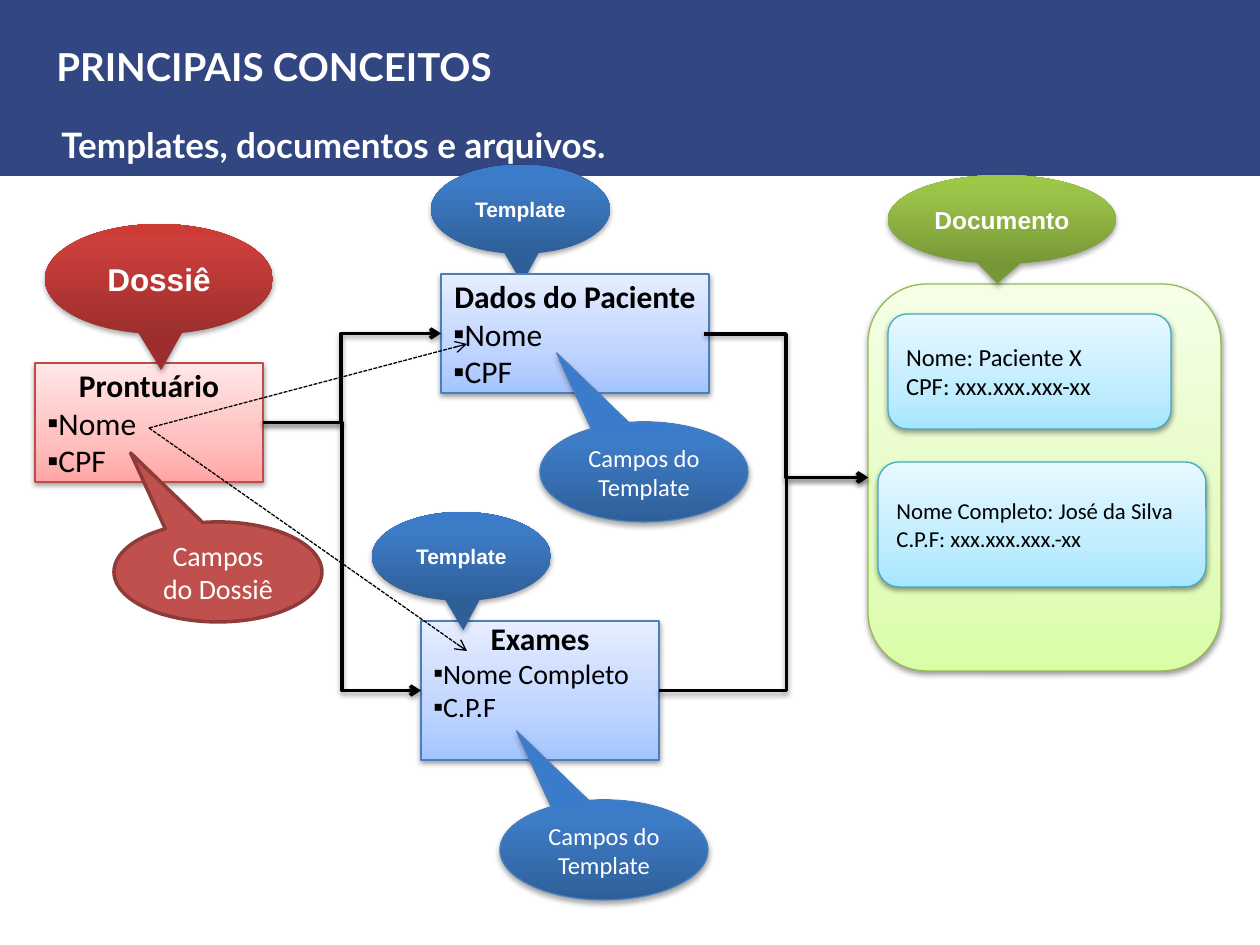
from lxml import etree
from pptx import Presentation
from pptx import util as u
from pptx.dml.color import RGBColor
from pptx.enum import dml, shapes, text
from pptx.oxml.ns import qn

PX = 914400 / 126
PINK = (("FFA6A5", "FFC0BF", "FFE7E7"), 35, "BF4C48")
LILAC = (("A4C4FF", "BFD4FF", "E6EEFF"), 35, "4B7EBC")
LIME = (("DAFDA7", "E4FCC2", "F5FFE7"), 35, "98B955")
AQUA = (("A7E6FF", "C1EDFF", "E7F8FF"), 35, "46AAC5")
RED = (("9C2F2D", "CB3E3A", "CE3B37"), 80, None)
BLUE = (("2F5F99", "3D7CC7", "3A7CCB"), 80, None)
BLUE_EDGED = (*BLUE[:2], "4B7EBC")
GREEN = (("779737", "9BC348", "9DC746"), 80, None)
DOWN = (0.01, 0.83)
UP_LEFT = (-0.42, -1.19)


def px(*values):
    """Turn pixels into a list of EMU lengths."""
    return [u.Emu(round(value * PX)) for value in values]


def color(value):
    """Turn a hex string into a colour."""
    return RGBColor.from_string(value)


def add(parent, tag, **attributes):
    """Append an XML element and return it."""
    return etree.SubElement(parent, qn(tag), attributes)


def drop_shadow(effects, distance):
    """Fill an effect list with a soft shadow pointing down."""
    shadow = add(effects, "a:outerShdw", blurRad="40000", dist=str(distance),
                 dir="5400000", rotWithShape="0")
    tint = add(shadow, "a:srgbClr", val="000000")
    add(tint, "a:alpha", val="38000" if distance == 20000 else "35000")


def outline(shape, value, width=0.75):
    """Set or remove the outline of a shape."""
    if value is None:
        shape.line.fill.background()
    else:
        shape.line.color.rgb = color(value)
        shape.line.width = u.Pt(width)


def solid_shape(page, kind, box, fill, line=None, width=0.75):
    """Add a flat shape without shadow."""
    shape = page.shapes.add_shape(kind, *px(*box))
    shape.fill.solid()
    shape.fill.fore_color.rgb = color(fill)
    outline(shape, line, width)
    shape.shadow.inherit = False
    return shape


def shaded_shape(page, kind, box, style, distance=20000):
    """Add a shape with a three-stop gradient and a soft shadow."""
    colors, middle, line = style
    shape = page.shapes.add_shape(kind, *px(*box))
    shape.fill.gradient()
    shape.fill.gradient_angle = 90
    stops = shape.element.spPr.find(".//" + qn("a:gsLst"))
    for stop in list(stops):
        stops.remove(stop)
    for place, value in zip((0, middle, 100), colors):
        stop = add(stops, "a:gs", pos=str(place * 1000))
        add(stop, "a:srgbClr", val=value)
    outline(shape, line)
    shape.shadow.inherit = False
    drop_shadow(shape.element.spPr.find(qn("a:effectLst")), distance)
    return shape


def write(shape, lines, size, font="Calibri", fill="000000", bold=False,
          align=text.PP_ALIGN.LEFT, anchor=text.MSO_ANCHOR.MIDDLE):
    """Write one paragraph per line and return the paragraphs."""
    frame = shape.text_frame
    frame.word_wrap = True
    frame.vertical_anchor = anchor
    frame.text = "\n".join(lines)
    for para in frame.paragraphs:
        para.alignment = align
        para.font.size = u.Pt(size)
        para.font.name = font
        para.font.bold = bold
        para.font.color.rgb = color(fill)
    return frame.paragraphs


def callout(page, box, style, words, size, tip, font="Calibri", bold=False):
    """Add an elliptical callout whose tail ends at the given tip."""
    kind = shapes.MSO_SHAPE.OVAL_CALLOUT
    if style is None:
        shape = solid_shape(page, kind, box, "C0504D", "8E3B39", 2)
    else:
        shape = shaded_shape(page, kind, box, style, 23000)
    shape.adjustments[0], shape.adjustments[1] = tip
    write(shape, [words], size, font, "FFFFFF", bold, text.PP_ALIGN.CENTER)


def card(page, box, style, title, fields, size=18):
    """Add a rectangle with a bold title and bulleted fields."""
    shape = shaded_shape(page, shapes.MSO_SHAPE.RECTANGLE, box, style)
    heading, *items = [title, *fields]
    frame = shape.text_frame
    frame.text = "\n".join([heading, *items])
    for para in frame.paragraphs[1:]:
        properties = para._p.get_or_add_pPr()
        add(properties, "a:buFont", typeface="Arial")
        add(properties, "a:buChar", char="▪")
    frame.word_wrap = True
    frame.vertical_anchor = text.MSO_ANCHOR.MIDDLE
    for index, para in enumerate(frame.paragraphs):
        para.alignment = text.PP_ALIGN.LEFT if index else text.PP_ALIGN.CENTER
        para.font.size = u.Pt(size if index else 18)
        para.font.name = "Calibri"
        para.font.bold = index == 0
        para.font.color.rgb = color("000000")
    return shape


def header(page, box):
    """Draw the title band with its heading and subheading."""
    left, top, width, height = box
    solid_shape(page, shapes.MSO_SHAPE.RECTANGLE, box, "324682")
    for words, size, place in (
            ("PRINCIPAIS CONCEITOS", 22, (44, 37, 1033, 59)),
            ("Templates, documentos e arquivos.", 20, (49, 98, 837, 67))):
        x, y, w, h = place
        label = page.shapes.add_textbox(*px(left + x, top + y, w, h))
        paras = write(label, [words], size, "Lato", "FFFFFF", True,
                      anchor=text.MSO_ANCHOR.TOP)
    paras[0].line_spacing = u.Pt(35)


def dossier(page, box):
    """Draw the dossier card with its two callouts."""
    left, top, width, height = box
    shape = card(page, box, PINK, "Prontuário", ["Nome", "CPF"])
    callout(page, (left + 10, top - 139, 228, 110), RED, "Dossiê", 18, DOWN, "Arial", True)
    callout(page, (left + 79, top + height + 40, 208, 100), None,
            "Campos do Dossiê", 16, UP_LEFT)
    return shape


def template(page, box, title, fields, size, shift, drop, label_behind):
    """Draw a template card with its name and fields callouts."""
    left, top, width, height = box

    def label():
        """Draw the callout that names the card."""
        callout(page, (left + shift, top - 109, 179, 89), BLUE,
                "Template", 12, DOWN, "Arial", True)

    if label_behind:
        label()
    shape = card(page, box, LILAC, title, fields, size)
    if not label_behind:
        label()
    callout(page, (left + drop[0], top + height + drop[1], 208, 100), BLUE_EDGED,
            "Campos do Template", 14, UP_LEFT)
    return shape


def document(page, box):
    """Draw the document panel with its callout and filled-in records."""
    left, top, width, height = box
    rounded = shapes.MSO_SHAPE.ROUNDED_RECTANGLE
    panel = shaded_shape(page, rounded, box, LIME)
    records = (
        ((20, 30, 283, 115), ["Nome: Paciente X", "CPF: xxx.xxx.xxx-xx"], 14),
        ((10, 178, 328, 125), ["Nome Completo: José da Silva", "C.P.F: xxx.xxx.xxx.-xx"], 13))
    for (x, y, w, h), lines, size in records:
        record = shaded_shape(page, rounded, (left + x, top + y, w, h), AQUA)
        write(record, lines, size)
    callout(page, (left + 20, top - 109, 228, 89), GREEN, "Documento", 14,
            (-0.02, 0.72), "Arial", True)
    return panel


def arrow(page, kind, ends, width, dash=None):
    """Add a black line with an open arrowhead at its end."""
    line = page.shapes.add_connector(kind, *px(*ends))
    line.line.color.rgb = color("000000")
    line.line.width = u.Pt(width)
    if dash:
        line.line.dash_style = dash
    add(line.line._get_or_add_ln(), "a:tailEnd", type="arrow")
    return line, add(line._element.spPr, "a:effectLst")


def flow(page, ends, bend, source, target):
    """Add a bent arrow joined to the cards at its ends."""
    line, effects = arrow(page, shapes.MSO_CONNECTOR.ELBOW, ends, 2)
    drop_shadow(effects, 20000)
    if source is not None:
        line.begin_connect(source, 3)
    line.end_connect(target, 1)
    guides = line._element.spPr.find(qn("a:prstGeom")).get_or_add_avLst()
    add(guides, "a:gd", name="adj1", fmla=f"val {round(bend * 100000)}")


def main():
    """Build the slide and save it."""
    deck = Presentation()
    deck.slide_width, deck.slide_height = px(1260, 945)
    page = deck.slides.add_slide(deck.slide_layouts[6])
    header(page, (0, 0, 1260, 176))
    panel = document(page, (868, 284, 353, 387))
    record = dossier(page, (35, 363, 228, 119))
    patient = template(page, (441, 274, 268, 119), "Dados do Paciente",
                       ["Nome", "CPF"], 18, -10, (99, 29), True)
    exams = template(page, (421, 621, 238, 139), "Exames",
                     ["Nome Completo", "C.P.F"], 16, -49, (79, 40), False)
    exams.text_frame.margin_bottom = px(45)[0]
    flow(page, (263, 423, 441, 334), 0.44, record, patient)
    flow(page, (263, 423, 421, 690), 0.5, record, exams)
    flow(page, (704, 334, 868, 477), 0.5, None, panel)
    flow(page, (659, 690, 868, 477), 0.61, exams, panel)
    for end in ((467, 344), (467, 651)):
        arrow(page, shapes.MSO_CONNECTOR.STRAIGHT, (149, 428, *end), 0.75,
              dml.MSO_LINE.SQUARE_DOT)
    deck.save("out.pptx")


if __name__ == "__main__":
    main()
